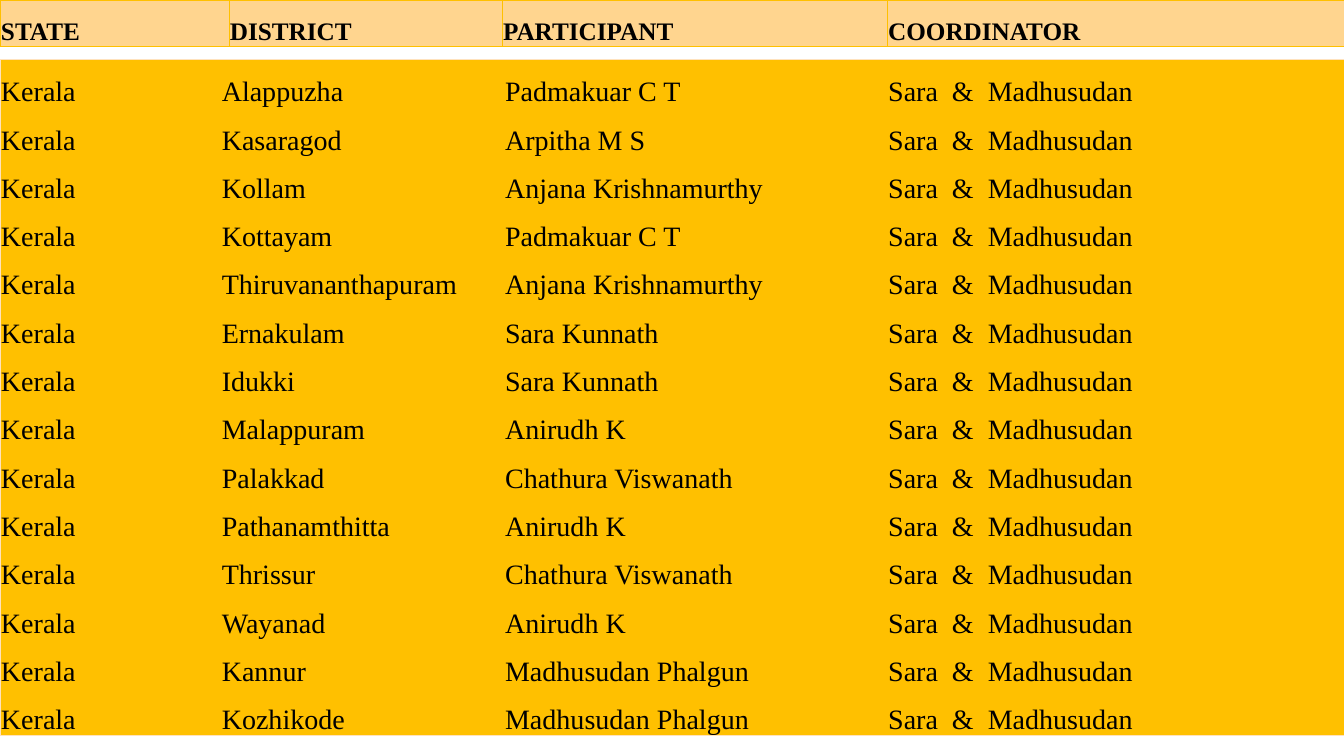
from lxml.etree import SubElement as Sub
from pptx import Presentation
from pptx.dml.color import RGBColor
from pptx.enum.text import MSO_ANCHOR as Anchor
from pptx.oxml.ns import qn
from pptx.util import Inches, Pt

FONT = "Times New Roman"
BLACK, GOLD, PEACH, CREAM = "000000", "FFC000", "FFD58F", "FFE2BD"
PLAIN = "{2D5ABB26-0587-4C30-8999-92F81FD0307C}"
HEADS = ["STATE", "DISTRICT", "PARTICIPANT", "COORDINATOR"]
STATE, LEADS = "Kerala", "Sara  &  Madhusudan"
PEOPLE = [
    ("Alappuzha", "Padmakuar C T"),
    ("Kasaragod", "Arpitha M S"),
    ("Kollam", "Anjana Krishnamurthy"),
    ("Kottayam", "Padmakuar C T"),
    ("Thiruvananthapuram", "Anjana Krishnamurthy"),
    ("Ernakulam", "Sara Kunnath"),
    ("Idukki", "Sara Kunnath"),
    ("Malappuram", "Anirudh K"),
    ("Palakkad", "Chathura Viswanath"),
    ("Pathanamthitta", "Anirudh K"),
    ("Thrissur", "Chathura Viswanath"),
    ("Wayanad", "Anirudh K"),
    ("Kannur", "Madhusudan Phalgun"),
    ("Kozhikode", "Madhusudan Phalgun"),
]


def color(code):
    return RGBColor.from_string(code)


def border(cell, sides, code):
    props = cell._tc.get_or_add_tcPr()
    for side in sides:
        line = Sub(props, qn("a:ln" + side), w=str(Pt(0.5)))
        Sub(Sub(line, qn("a:solidFill")), qn("a:srgbClr"), val=code)


def style(cell, text, size, bold, fill):
    cell.margin_left = cell.margin_right = cell.margin_top = Inches(0.01)
    cell.margin_bottom = 0
    cell.vertical_anchor = Anchor.BOTTOM
    cell.fill.solid()
    cell.fill.fore_color.rgb = color(fill)
    cell.text = text
    font = cell.text_frame.paragraphs[0].runs[0].font
    font.name, font.size, font.bold = FONT, Pt(size), bold
    font.color.rgb = color(BLACK)


def grid(slide, box, widths, rows, size, bold, fill, edge, inner):
    left, top, width, height = map(Inches, box)
    frame = slide.shapes.add_table(len(rows), len(widths), left, top, width, height)
    table = frame.table
    table.first_row = table.horz_banding = False
    table._tbl.tblPr.find(qn("a:tableStyleId")).text = PLAIN
    for col, span in zip(table.columns, widths):
        col.width = Inches(span)
    for r, row in enumerate(rows):
        table.rows[r].height = int(height / len(rows))
        for c, text in enumerate(row):
            ends = {"L": c == 0, "R": c == len(row) - 1,
                    "T": r == 0, "B": r == len(rows) - 1}
            cell = table.cell(r, c)
            border(cell, [side for side in ends if inner or ends[side]], edge)
            style(cell, text, size, bold, fill)


def body(slide, box):
    rows = [(STATE, place, name, LEADS) for place, name in PEOPLE]
    grid(slide, box, [2.19, 2.81, 3.8, 4.53], rows, 20, False, GOLD, CREAM, False)


def header(slide, box):
    grid(slide, box, [2.27, 2.71, 3.82, 4.53], [HEADS], 18, True, PEACH, GOLD, True)


def main():
    deck = Presentation()
    deck.slide_width, deck.slide_height = Inches(13.33), Inches(7.5)
    slide = deck.slides.add_slide(deck.slide_layouts[6])
    body(slide, (0, 0.59, 13.33, 6.71))
    header(slide, (0, 0, 13.33, 0.46))
    deck.save("out.pptx")


if __name__ == "__main__":
    main()
